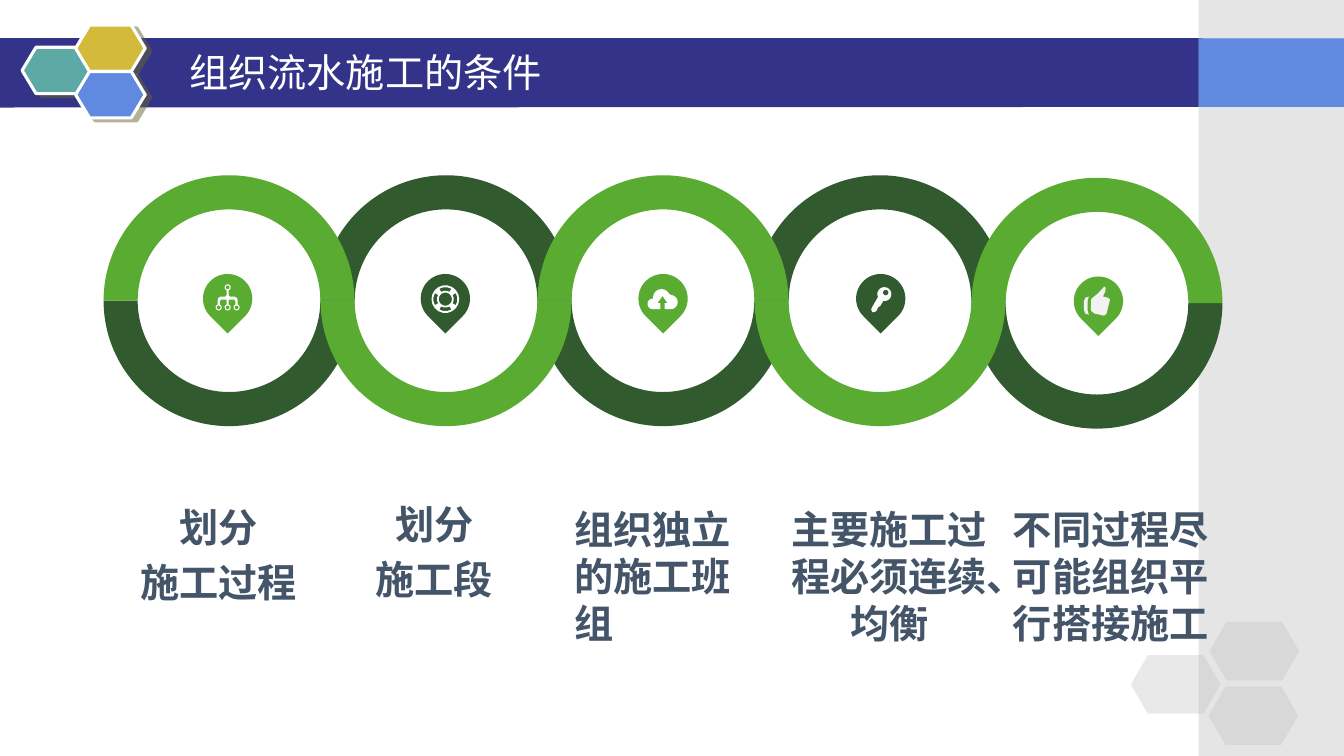
import math

import pptx
import pptx.dml.color
import pptx.enum.shapes
import pptx.enum.text
import pptx.oxml
import pptx.oxml.ns
import pptx.util

Pt = pptx.util.Pt
PRESET = pptx.enum.shapes.MSO_SHAPE
ALIGN = pptx.enum.text.PP_ALIGN
ANCHOR = pptx.enum.text.MSO_ANCHOR

LIGHT, DARK = "5AAB31", "315B2F"
NAVY, BLUE, SILVER, WHITE = "333389", "5F8ADF", "C0C0C0", "FFFFFF"
SLATE = "445469"


def rgb(hex_string):
    return pptx.dml.color.RGBColor.from_string(hex_string)


def arc(x, y, radius, start, end, step=20):
    """Points along a circle, in degrees clockwise from the right."""
    count = math.ceil(abs(end - start) / step)
    angles = [math.radians(start + (end - start) * i / count) for i in range(count + 1)]
    return [(x + radius * math.cos(a), y + radius * math.sin(a)) for a in angles]


class SlideBuilder:
    font = "Arial"
    text_size = 28

    def __init__(self, slide):
        self.slide = slide

    def paint(self, shape, color, opacity=100):
        shape.shadow.inherit = False
        shape.fill.solid()
        shape.fill.fore_color.rgb = rgb(color)
        shape.line.fill.background()
        if opacity < 100:
            fill = shape.fill._xPr.find(".//" + pptx.oxml.ns.qn("a:srgbClr"))
            fill.append(pptx.oxml.parse_xml(
                f'<a:alpha {pptx.oxml.ns.nsdecls("a")} val="{opacity * 1000}"/>'))
        return shape

    def preset(self, kind, x, y, width, height, color, opacity=100):
        shape = self.slide.shapes.add_shape(kind, Pt(x), Pt(y), Pt(width), Pt(height))
        return self.paint(shape, color, opacity)

    def hexagon(self, x, y, width, height, color, corner, opacity=100):
        shape = self.preset(PRESET.HEXAGON, x, y, width, height, color, opacity)
        shape.adjustments[0] = corner
        return shape

    def badge(self, x, y, color):
        """Hexagon with a white edge and a hard shadow."""
        shape = self.hexagon(x, y, 49.7, 33.1, color, 0.3)
        shape.line.color.rgb = rgb(WHITE)
        shape.line.width = Pt(2.25)
        effects = shape._element.spPr.find(pptx.oxml.ns.qn("a:effectLst"))
        effects.append(pptx.oxml.parse_xml(
            f'<a:outerShdw {pptx.oxml.ns.nsdecls("a")} blurRad="0" dist="{Pt(4.5)}" '
            'dir="1620000" algn="ctr" rotWithShape="0">'
            '<a:srgbClr val="666633"><a:alpha val="50000"/></a:srgbClr></a:outerShdw>'))

    def half_ring(self, x, y, size, color, upper):
        shape = self.preset(PRESET.BLOCK_ARC, x, y, size, size, color)
        half_turn = 108  # 180 degrees in adjustment units
        shape.adjustments[0] = half_turn if upper else 0
        shape.adjustments[1] = 0 if upper else half_turn
        shape.adjustments[2] = 0.136

    def outline(self, contours, color, x=0, y=0):
        """Filled outline of one or more contours, moved by x and y."""
        builder = None
        for contour in contours:
            points = [(Pt(x + dx), Pt(y + dy)) for dx, dy in contour]
            if builder is None:
                builder = self.slide.shapes.build_freeform(*points[0])
            else:
                builder.move_to(*points[0])
            builder.add_line_segments(points[1:], close=True)
        return self.paint(builder.convert_to_shape(), color)

    def pin(self, x, y, color):
        size = 35.2
        shape = self.preset(PRESET.TEAR, x - size / 2, y - size / 2, size, size, color)
        shape.rotation = 135

    def text(self, lines, x, y, width, height, color, align=ALIGN.CENTER, bold=True,
             font=None, space_before=5.6, inset=0, anchor=ANCHOR.TOP):
        frame = self.slide.shapes.add_textbox(Pt(x), Pt(y), Pt(width), Pt(height)).text_frame
        frame.word_wrap = True
        frame.vertical_anchor = anchor
        frame.margin_left = frame.margin_right = Pt(inset)
        frame.margin_top = frame.margin_bottom = Pt(inset / 2)
        frame.text = lines
        for paragraph in frame.paragraphs:
            paragraph.alignment = align
            paragraph.space_before = Pt(space_before)
            style = paragraph.runs[0].font
            style.name = font or self.font
            style.size = Pt(self.text_size)
            style.bold = bold
            style.color.rgb = rgb(color)


def hierarchy_icon():
    right = [(0.8, -5.8), (0.8, -2.4), (1.6, -1.4), (5, -1.4), (6.7, -0.4), (7.2, 1.5),
             (7.2, 4.1), (5.6, 4.1), (5.6, 2), (4.8, 0.7), (0.8, 0.7), (0.8, 4.1)]
    branches = right + [(-x, y) for x, y in reversed(right)]
    nodes = [(0, -8), (-6.4, 6.3), (0, 6.3), (6.4, 6.3)]
    return [branches] + [arc(x, y, r, 0, 360, 36) for x, y in nodes for r in (2.2, 1.4)]


def lifebuoy_icon():
    gaps = [arc(0, 0.4, 8.6, middle - 30, middle + 30) + arc(0, 0.4, 6, middle + 30, middle - 30)
            for middle in range(0, 360, 90)]
    return [arc(0, 0.4, 9.9, 0, 360), arc(0, 0.4, 4.7, 0, 360)] + gaps


def cloud_icon():
    arrow = [(1.1, 7.6), (1.1, 3.2), (3.2, 3.2), (-0.4, -1.8), (-4, 3.2), (-1.8, 3.2), (-1.8, 7.6)]
    return [arc(-7.3, 3.8, 3.8, 90, 270) + arc(-1.1, -0.8, 6, 170, 330)
            + arc(5.4, 2.5, 5.1, 270, 450) + arrow]


def key_icon():
    shaft = [(1.8, 1.8), (-0.4, 5.4), (-1.8, 6.1), (-3.2, 9), (-4.7, 9.7),
             (-6.1, 9.7), (-6.8, 7.6), (-6.1, 6.1)]
    return [arc(2.6, -3.2, 5, 155, 460) + shaft, arc(3.6, -4.3, 2, 0, 360)]


def thumb_icon():
    hand = [(3.2, -3.2), (5, -7), (5.2, -9.6), (4.3, -10.4), (2.6, -8.6), (-0.4, -5.4),
            (-4.6, -2), (-5.4, -0.4), (-5.4, 6.8), (-3, 8.8), (4, 10.4), (5.8, 9),
            (8.3, -1.1), (7, -2.4)]
    cuff = [(-6.8, -3.2), (-9.4, -2.4), (-10.4, 0.4), (-10.4, 6.1), (-9.4, 8.8),
            (-6.8, 9.7), (-7.6, 7), (-7.6, -0.5)]
    return [hand, cuff]


def main():
    deck = pptx.Presentation()
    deck.slide_width, deck.slide_height = Pt(960), Pt(540)
    page = SlideBuilder(deck.slides.add_slide(deck.slide_layouts[6]))

    page.outline([[(-0.7, 27.2), (859.6, 27.2), (859, 76.4), (-0.7, 76.8)]], NAVY)
    page.preset(PRESET.RECTANGLE, 856.2, 0, 103.8, 540, SILVER, 40)
    page.preset(PRESET.RECTANGLE, 856.2, 27.4, 103.8, 49, BLUE)
    for x, y, color in [(15.8, 33.8, "5DA9A5"), (54, 18, "D4BA3A"), (54, 51.1, BLUE)]:
        page.badge(x, y, color)
    for x, y in [(807.8, 468), (864, 444.2), (863.3, 490.3)]:
        page.hexagon(x, y, 64, 41.8, SILVER, 0.29, 35)

    page.text("组织流水施工的条件", 128.2, 30.2, 696.2, 41.8, WHITE, ALIGN.LEFT, bold=False,
              font="DejaVu Sans", space_before=0, inset=7.2, anchor=ANCHOR.MIDDLE)

    # Light halves alternate top and bottom and lie over the dark ones
    ring_drops = [0, 0, 0, 0, 1.8]
    for color, upper_parity in [(DARK, 1), (LIGHT, 0)]:
        for i, drop in enumerate(ring_drops):
            page.half_ring(74 + 155 * i, 125.2 + drop, 179.2, color, i % 2 == upper_parity)

    icons = [hierarchy_icon, lifebuoy_icon, cloud_icon, key_icon, thumb_icon]
    for i, (icon, drop) in enumerate(zip(icons, ring_drops)):
        x, y = 162.6 + 155.5 * i, 213.3 + drop
        page.pin(x, y, DARK if i % 2 else LIGHT)
        page.outline(icon(), "F2F2F2" if icon is thumb_icon else WHITE, x, y)

    conditions = [
        ("划分\n施工过程", 93.6, 359.3, 125.3, 74.9, ALIGN.CENTER),
        ("划分\n施工段", 247.7, 357.1, 125.3, 74.9, ALIGN.CENTER),
        ("组织独立的施工班组", 410.4, 360.7, 126, 101.5, ALIGN.LEFT),
        ("主要施工过程必须连续、均衡", 563.8, 360.7, 142.6, 101.5, ALIGN.CENTER),
        ("不同过程尽可能组织平行搭接施工", 717.1, 360.7, 152.6, 101.5, ALIGN.CENTER),
    ]
    for lines, x, y, width, height, align in conditions:
        page.text(lines, x, y, width, height, SLATE, align)

    deck.save("out.pptx")


if __name__ == "__main__":
    main()
